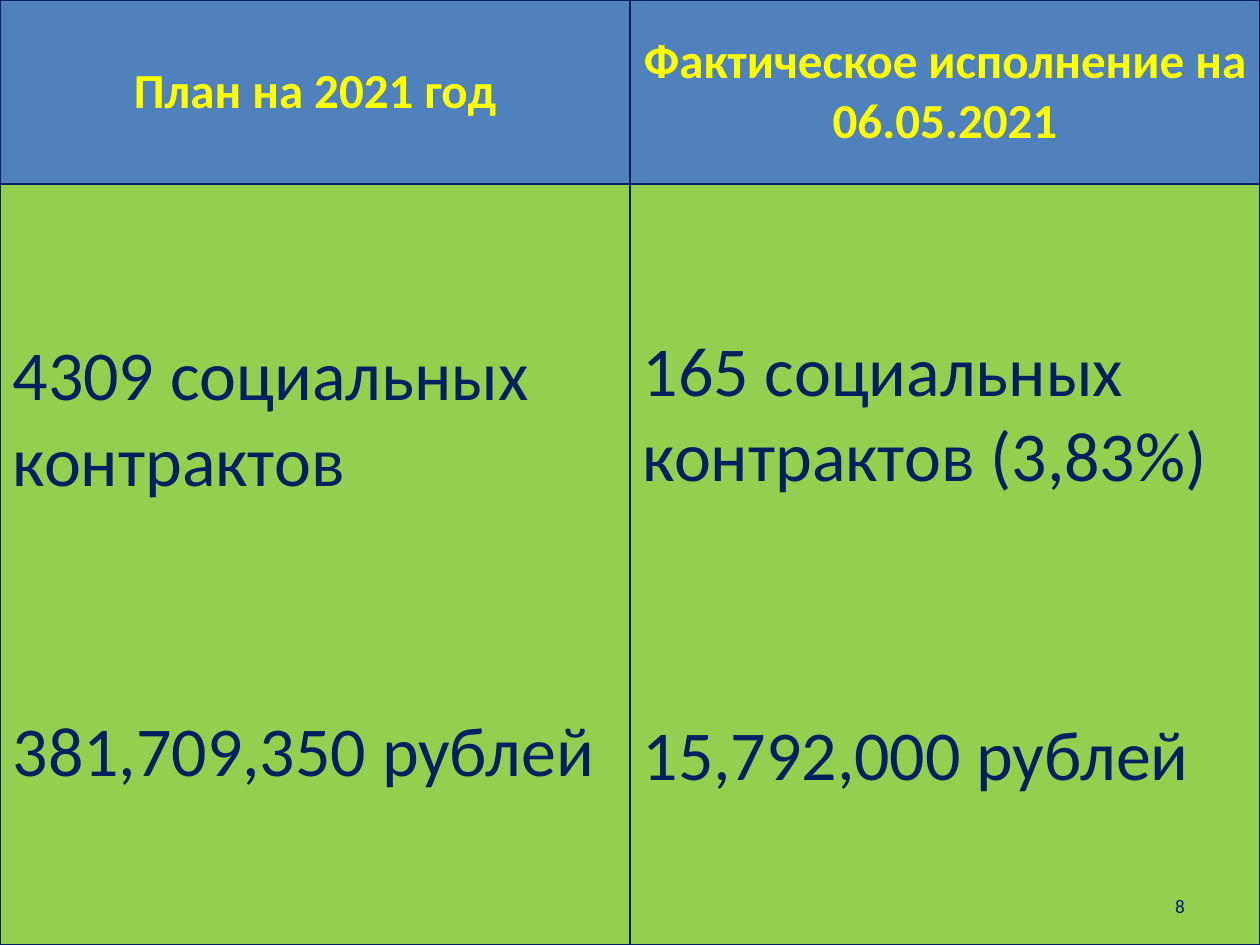
from lxml import etree
from pptx import Presentation
from pptx.dml.color import RGBColor
from pptx.enum import text
from pptx.oxml import ns
from pptx.util import Cm, Pt

NAVY = "002060"


def rgb(code):
    return RGBColor.from_string(code)


def add_borders(cell):
    properties = cell._tc.get_or_add_tcPr()
    for position, side in enumerate(("lnL", "lnR", "lnT", "lnB")):
        line = etree.Element(ns.qn(f"a:{side}"), w=str(Pt(1)))
        fill = etree.SubElement(line, ns.qn("a:solidFill"))
        etree.SubElement(fill, ns.qn("a:srgbClr"), val=NAVY)
        properties.insert(position, line)


prs = Presentation()
prs.slide_width, prs.slide_height = Cm(25.4), Cm(19.05)
slide = prs.slides.add_slide(prs.slide_layouts[6])

# Each column: heading, paragraphs below it, gap in points above the amount
columns = [
    ("План на 2021 год",
     ["4309 социальных контрактов", "381,709,350 рублей"], 117),
    ("Фактическое исполнение на 06.05.2021",
     ["165 социальных", "контрактов (3,83%)", "15,792,000 рублей"], 122),
]

contracts = slide.shapes.add_table(
    2, len(columns), Cm(0), Cm(0), prs.slide_width, prs.slide_height).table
contracts.rows[0].height = Cm(3.71)
contracts.rows[1].height = Cm(15.34)

for col, (heading, results, gap) in enumerate(columns):
    rows = [([heading], "4F81BD", "FFFF00", 28, True),
            (results, "92D050", NAVY, 40, False)]
    for row, (lines, fill, color, size, is_heading) in enumerate(rows):
        cell = contracts.cell(row, col)
        cell.fill.solid()
        cell.fill.fore_color.rgb = rgb(fill)
        cell.vertical_anchor = text.MSO_ANCHOR.MIDDLE
        add_borders(cell)
        cell.text_frame.text = "\n".join(lines)
        for paragraph in cell.text_frame.paragraphs:
            paragraph.alignment = text.PP_ALIGN.CENTER if is_heading else text.PP_ALIGN.LEFT
            font = paragraph.runs[0].font
            font.name, font.size, font.bold = "Calibri", Pt(size), is_heading
            font.color.rgb = rgb(color)
    amount = contracts.cell(1, col).text_frame.paragraphs[-1]
    amount.space_before = Pt(gap)

page_number = slide.shapes.add_textbox(Cm(23.44), Cm(17.91), Cm(0.71), Cm(0.74)).text_frame
page_number.word_wrap = False
page_number.text = "8"
font = page_number.paragraphs[0].runs[0].font
font.name, font.size = "Calibri", Pt(11)
font.color.rgb = rgb(NAVY)

prs.save("out.pptx")
